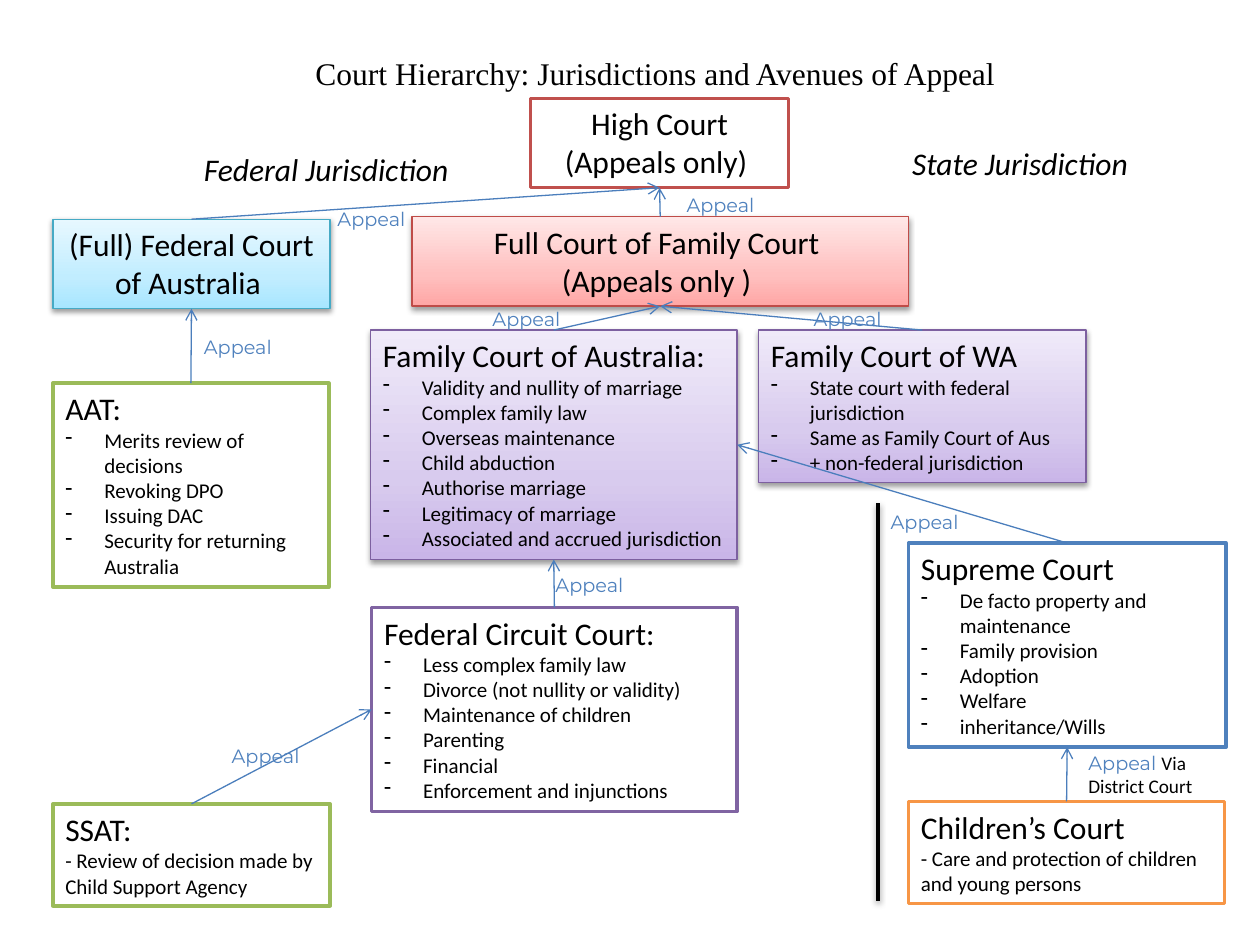
from lxml import etree
from pptx import Presentation
from pptx.dml.color import RGBColor
from pptx.enum.shapes import MSO_CONNECTOR, MSO_SHAPE
from pptx.enum.text import MSO_ANCHOR, PP_ALIGN
from pptx.oxml import parse_xml
from pptx.oxml.ns import nsdecls, qn
from pptx.util import Inches, Pt

BLACK = RGBColor(0, 0, 0)
WHITE = RGBColor(0xFF, 0xFF, 0xFF)
RED = RGBColor(0xC0, 0x50, 0x4D)
DARK_RED = RGBColor(0xBF, 0x4C, 0x48)
TEAL = RGBColor(0x46, 0xAA, 0xC5)
PURPLE = RGBColor(0x80, 0x64, 0xA2)
DARK_PURPLE = RGBColor(0x7D, 0x60, 0xA0)
GREEN = RGBColor(0x9B, 0xBB, 0x59)
BLUE = RGBColor(0x4F, 0x81, 0xBD)
ORANGE = RGBColor(0xF7, 0x96, 0x46)
ARROW_BLUE = RGBColor(0x4B, 0x7E, 0xBC)

# Gradient stops at 0, 35 and 100 %, from the bottom up
BLUE_FADE = ("A7E6FF", "C1EDFF", "E7F8FF")
RED_FADE = ("FFA6A5", "FFC0BF", "FFE7E7")
PURPLE_FADE = ("C9B5E8", "D8CBEE", "F0EAF9")

SHADOW = (f'<a:outerShdw {nsdecls("a")} blurRad="40000" dist="20000" dir="5400000" '
          'rotWithShape="0"><a:srgbClr val="000000"><a:alpha val="38000"/>'
          '</a:srgbClr></a:outerShdw>')
TOP, LEFT, BOTTOM, RIGHT = range(4)


def style(para, size, font="Calibri", color=BLACK, italic=None):
    for span in para.runs:
        span.font.size = Pt(size)
        span.font.name = font
        span.font.color.rgb = color
        span.font.italic = italic


def add_line(color, width):
    line = page.shapes.add_connector(MSO_CONNECTOR.STRAIGHT, 0, 0, 0, 0)
    line.line.color.rgb = color
    line.line.width = Pt(width)
    effects = etree.SubElement(line._element.spPr, qn("a:effectLst"))
    return line, effects


deck = Presentation()
deck.slide_width, deck.slide_height = Inches(10), Inches(7.5)
page = deck.slides.add_slide(deck.slide_layouts[5])

# Title
title = page.shapes.title
title.left, title.top = Inches(1.33), Inches(0.38)
title.width, title.height = Inches(7.87), Inches(0.4)
title.text_frame.text = "Court Hierarchy: Jurisdictions and Avenues of Appeal  "
title.text_frame.vertical_anchor = MSO_ANCHOR.TOP
title.text_frame.paragraphs[0].alignment = PP_ALIGN.CENTER
style(title.text_frame.paragraphs[0], 18, "Times New Roman")

# Courts: name, place, outline, gradient, heading lines, details, dashed list
courts = [
    ("wa", (6.02, 2.62, 2.6, 1.21), DARK_PURPLE, PURPLE_FADE, ["Family Court of WA"],
     ["State court with federal jurisdiction", "Same as Family Court of Aus",
      "+ non-federal jurisdiction"], True),
    ("federal", (0.42, 1.74, 2.2, 0.71), TEAL, BLUE_FADE,
     ["(Full) Federal Court of Australia "], [], False),
    ("full", (3.27, 1.72, 3.94, 0.71), DARK_RED, RED_FADE,
     ["Full Court of Family Court ", "(Appeals only ) "], [], False),
    ("high", (4.21, 0.78, 2.05, 0.71), RED, None,
     ["High Court (Appeals only) "], [], False),
    ("family", (2.94, 2.62, 2.91, 1.82), DARK_PURPLE, PURPLE_FADE,
     ["Family Court of Australia:"],
     ["Validity and nullity of marriage", "Complex family law", "Overseas maintenance",
      "Child abduction", "Authorise marriage", "Legitimacy of marriage",
      "Associated and accrued jurisdiction"], True),
    ("circuit", (2.95, 4.82, 2.9, 1.62), PURPLE, None, ["Federal Circuit Court:"],
     ["Less complex family law", "Divorce (not nullity or validity)",
      "Maintenance of children", "Parenting", "Financial",
      "Enforcement and injunctions"], True),
    ("ssat", (0.42, 6.38, 2.2, 0.81), GREEN, None, ["SSAT:"],
     ["- Review of decision made by Child Support Agency"], False),
    ("supreme", (7.21, 4.31, 2.52, 1.62), BLUE, None, ["Supreme Court"],
     ["De facto property and maintenance", "Family provision", "Adoption", "Welfare",
      "inheritance/Wills"], True),
    ("children", (7.21, 6.36, 2.51, 0.81), ORANGE, None, ["Children’s Court"],
     ["- Care and protection of children and young persons"], False),
    ("aat", (0.42, 3.04, 2.19, 1.62), GREEN, None, ["AAT:"],
     ["Merits review of decisions", "Revoking DPO", "Issuing DAC",
      "Security for returning Australia"], True),
]
boxes = {}
for name, place, outline, fade, heading, details, dashed in courts:
    box = page.shapes.add_shape(MSO_SHAPE.RECTANGLE, *map(Inches, place))
    boxes[name] = box
    box.line.color.rgb = outline
    box.line.width = Pt(0.75 if fade else 2)
    box.shadow.inherit = False
    if fade:
        box.fill.gradient()
        box.fill.gradient_angle = 90
        stops = box._element.spPr.find(qn("a:gradFill")).find(qn("a:gsLst"))
        for stop in list(stops):
            stops.remove(stop)
        for position, color in zip((0, 35000, 100000), fade):
            stop = etree.SubElement(stops, qn("a:gs"), pos=str(position))
            etree.SubElement(stop, qn("a:srgbClr"), val=color)
        box._element.spPr.find(qn("a:effectLst")).append(parse_xml(SHADOW))
    else:
        box.fill.solid()
        box.fill.fore_color.rgb = WHITE

    frame = box.text_frame
    frame.word_wrap = True
    frame.vertical_anchor = MSO_ANCHOR.TOP
    frame.text = "\n".join(heading + details)
    for index, para in enumerate(frame.paragraphs):
        is_detail = index >= len(heading)
        para.alignment = PP_ALIGN.LEFT if details else PP_ALIGN.CENTER
        style(para, 12 if is_detail else 18)
        if is_detail and dashed:
            props = para._p.get_or_add_pPr()
            props.set("marL", str(Inches(0.31)))
            props.set("indent", str(-Inches(0.31)))
            etree.SubElement(props, qn("a:buChar"), char="-")

# Divider between federal and state courts
divider, effects = add_line(BLACK, 2)
effects.append(parse_xml(SHADOW))
divider.begin_x = divider.end_x = Inches(6.97)
divider.begin_y, divider.end_y = Inches(7.15), Inches(3.99)

# Appeal arrows, each glued to its two courts
appeals = [
    ("circuit", TOP, "family", BOTTOM), ("full", TOP, "high", BOTTOM),
    ("family", TOP, "full", BOTTOM), ("wa", TOP, "full", BOTTOM),
    ("ssat", TOP, "circuit", LEFT), ("supreme", TOP, "family", RIGHT),
    ("children", TOP, "supreme", BOTTOM), ("aat", TOP, "federal", BOTTOM),
    ("federal", TOP, "high", BOTTOM),
]
for lower, start, upper, end in appeals:
    arrow, effects = add_line(ARROW_BLUE, 0.75)
    arrow.begin_connect(boxes[lower], start)
    arrow.end_connect(boxes[upper], end)
    etree.SubElement(arrow.line._get_or_add_ln(), qn("a:tailEnd"), type="arrow")

# Jurisdiction names and appeal labels
labels = [("Federal Jurisdiction", 1.52, 1.14, 2.52, 0.4),
          ("State Jurisdiction", 7.14, 1.09, 2.72, 0.4),
          ("Appeal", 2.58, 1.48, 1.01, 0.4),
          ("Appeal ", 8.54, 5.91, 1.33, 0.47)]
labels += [("Appeal", left, top, 1.01, 0.29) for left, top in (
    (1.52, 2.6), (1.74, 5.85), (4.31, 4.49), (3.81, 2.38),
    (5.35, 1.48), (6.36, 2.38), (6.97, 3.99))]
for text, *place in labels:
    label = page.shapes.add_textbox(*map(Inches, place))
    label.text_frame.word_wrap = True
    label.text_frame.vertical_anchor = MSO_ANCHOR.BOTTOM
    label.text_frame.text = text
    para = label.text_frame.paragraphs[0]
    if "Jurisdiction" in text:
        style(para, 18, italic=True)
    else:
        style(para, 11, "Montserrat", BLUE)
    if text == "Appeal ":
        span = para.add_run()
        span.text = "Via District Court"
        span.font.size, span.font.name = Pt(11), "Calibri"
        span.font.color.rgb = BLACK

deck.save("out.pptx")
